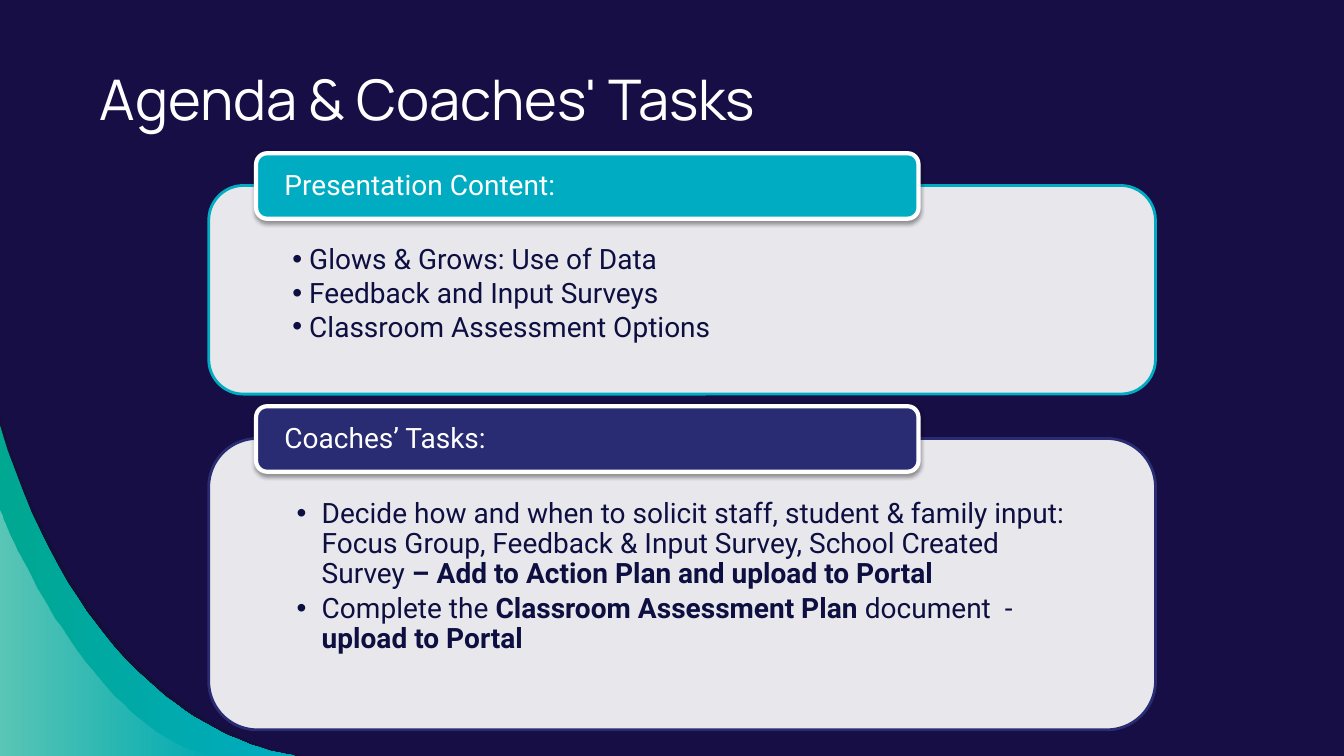
"""Build the agenda slide with two titled panels and a corner swoosh."""
from lxml import etree
from pptx import Presentation
from pptx import util as u
from pptx.dml.color import RGBColor
from pptx.enum import shapes, text
from pptx.oxml import ns

PX = 9144
W, H = 1333, 750
NAVY, INK, TEAL, GREEN, INDIGO, WHITE = "160E44", "0D0F41", "00ACC2", "00A791", "292C73", "FFFFFF"

TITLE = "Agenda & Coaches' Tasks"
PANELS = [
    dict(
        heading="Presentation Content:", color=TEAL, top=184, height=207,
        level=0, indent=0, spacing=1.0, after=0,
        items=[
            [(" Glows & Grows: Use of Data", False)],
            [(" Feedback and Input Surveys", False)],
            [(" Classroom Assessment Options", False)],
        ],
    ),
    dict(
        heading="Coaches’ Tasks:", color=INDIGO, top=435, height=289,
        level=1, indent=25, spacing=0.9, after=3,
        items=[
            [("Decide how and when to solicit staff, student & family input: Focus Group, "
              "Feedback & Input Survey, School Created Survey ", False),
             ("– Add to Action Plan and upload to Portal", True)],
            [("Complete the ", False), ("Classroom Assessment Plan ", True),
             ("document  - ", False), ("upload to Portal", True)],
        ],
    ),
]
SWOOSHES = [
    ([(0, 413), (98, 739), (303, 750), (303, 750)], [("12102F", 54)]),
    ([(0, 422), (95, 739), (295, 750), (295, 750)], [(GREEN, 100), (TEAL, 100)]),
    ([(0, 506), (0, 506), (91, 735), (216, 750)], [(WHITE, 36), (WHITE, 0)]),
]
PANEL_X, PANEL_W = 207, 939
TAB_X, TAB_W, TAB_H, TAB_RISE = 254, 657, 65, 32
STEPS = 40


def rgb(value):
    return RGBColor.from_string(value)


def px(*values):
    return [u.Emu(round(v * PX)) for v in values]


def add_xml(parent, tag, **attrs):
    return etree.SubElement(parent, ns.qn(tag), {k: str(v) for k, v in attrs.items()})


def set_alpha(sp, alphas):
    colors = sp._element.spPr.findall(".//" + ns.qn("a:srgbClr"))
    for color, alpha in zip(colors, alphas):
        add_xml(color, "a:alpha", val=alpha * 1000)


def bezier(points, t):
    weights = ((1 - t) ** 3, 3 * t * (1 - t) ** 2, 3 * t * t * (1 - t), t ** 3)
    return tuple(sum(w * p[axis] for w, p in zip(weights, points)) for axis in (0, 1))


def add_swoosh(s, points, stops):
    curve = [bezier(points, i / STEPS) for i in range(STEPS + 1)]
    builder = s.shapes.build_freeform(*curve[0], scale=PX)
    builder.add_line_segments(curve[1:] + [(0, H)], close=True)
    sp = builder.convert_to_shape()
    sp.shadow.inherit = False
    sp.line.fill.background()
    if len(stops) == 1:
        sp.fill.solid()
        sp.fill.fore_color.rgb = rgb(stops[0][0])
    else:
        sp.fill.gradient()
        sp.fill.gradient_angle = 0
        for stop, (color, _) in zip(sp.fill.gradient_stops, stops):
            stop.color.rgb = rgb(color)
    set_alpha(sp, [alpha for _, alpha in stops])


def add_box(s, bounds, fill, line, width, insets, anchor):
    sp = s.shapes.add_shape(shapes.MSO_SHAPE.ROUNDED_RECTANGLE, *px(*bounds))
    sp.shadow.inherit = False
    sp.fill.solid()
    sp.fill.fore_color.rgb = rgb(fill)
    sp.line.color.rgb = rgb(line)
    sp.line.width = u.Pt(width)
    set_frame(sp.text_frame, insets, anchor)
    return sp


def set_frame(tf, insets, anchor):
    tf.word_wrap = True
    tf.auto_size = text.MSO_AUTO_SIZE.NONE
    tf.vertical_anchor = anchor
    tf.margin_left, tf.margin_top, tf.margin_right, tf.margin_bottom = px(*insets)


def format_text(p, size, font, color):
    p.alignment = text.PP_ALIGN.LEFT
    for r in p.runs:
        r.font.size = u.Pt(size)
        r.font.name = font
        r.font.color.rgb = rgb(color)


def add_panel(s, panel):
    bounds = (PANEL_X, panel["top"], PANEL_W, panel["height"])
    sp = add_box(s, bounds, WHITE, panel["color"], 2, (73, 46, 73, 16), text.MSO_ANCHOR.TOP)
    set_alpha(sp, [90])
    tf = sp.text_frame
    for i, item in enumerate(panel["items"]):
        p = tf.add_paragraph() if i else tf.paragraphs[0]
        p.level = panel["level"]
        p.line_spacing = panel["spacing"]
        p.space_after = u.Pt(panel["after"])
        for words, bold in item:
            r = p.add_run()
            r.text = words
            r.font.bold = bold
        format_text(p, 20, "Roboto", INK)
        props = p._p.get_or_add_pPr()
        props.set("marL", str(panel["indent"] * PX))
        props.set("indent", str(-panel["indent"] * PX))
        add_xml(props, "a:buFont", typeface="Arial")
        add_xml(props, "a:buChar", char="•")


def add_tab(s, panel):
    bounds = (TAB_X, panel["top"] - TAB_RISE, TAB_W, TAB_H)
    sp = add_box(s, bounds, panel["color"], WHITE, 3, (25, 0, 25, 0), text.MSO_ANCHOR.MIDDLE)
    effects = sp._element.spPr.find(ns.qn("a:effectLst"))
    shadow = add_xml(effects, "a:outerShdw", blurRad=u.Pt(3.1), dist=u.Pt(1.6),
                     dir=90 * 60000, rotWithShape=0)
    add_xml(add_xml(shadow, "a:srgbClr", val="000000"), "a:alpha", val=38000)
    p = sp.text_frame.paragraphs[0]
    p.text = panel["heading"]
    p.line_spacing = 0.9
    format_text(p, 20, "Roboto", WHITE)


def main():
    prs = Presentation()
    prs.slide_width, prs.slide_height = px(W, H)
    s = prs.slides.add_slide(prs.slide_layouts[5])
    s.background.fill.solid()
    s.background.fill.fore_color.rgb = rgb(NAVY)

    title = s.shapes.title
    title.left, title.top, title.width, title.height = px(89, 51, 1026, 92)
    title.text_frame.text = TITLE
    set_frame(title.text_frame, (10, 10, 10, 10), text.MSO_ANCHOR.MIDDLE)
    format_text(title.text_frame.paragraphs[0], 40, "Manrope", WHITE)

    for points, stops in SWOOSHES:
        add_swoosh(s, points, stops)
    for panel in PANELS:
        add_panel(s, panel)
        add_tab(s, panel)
    prs.save("out.pptx")


if __name__ == "__main__":
    main()
